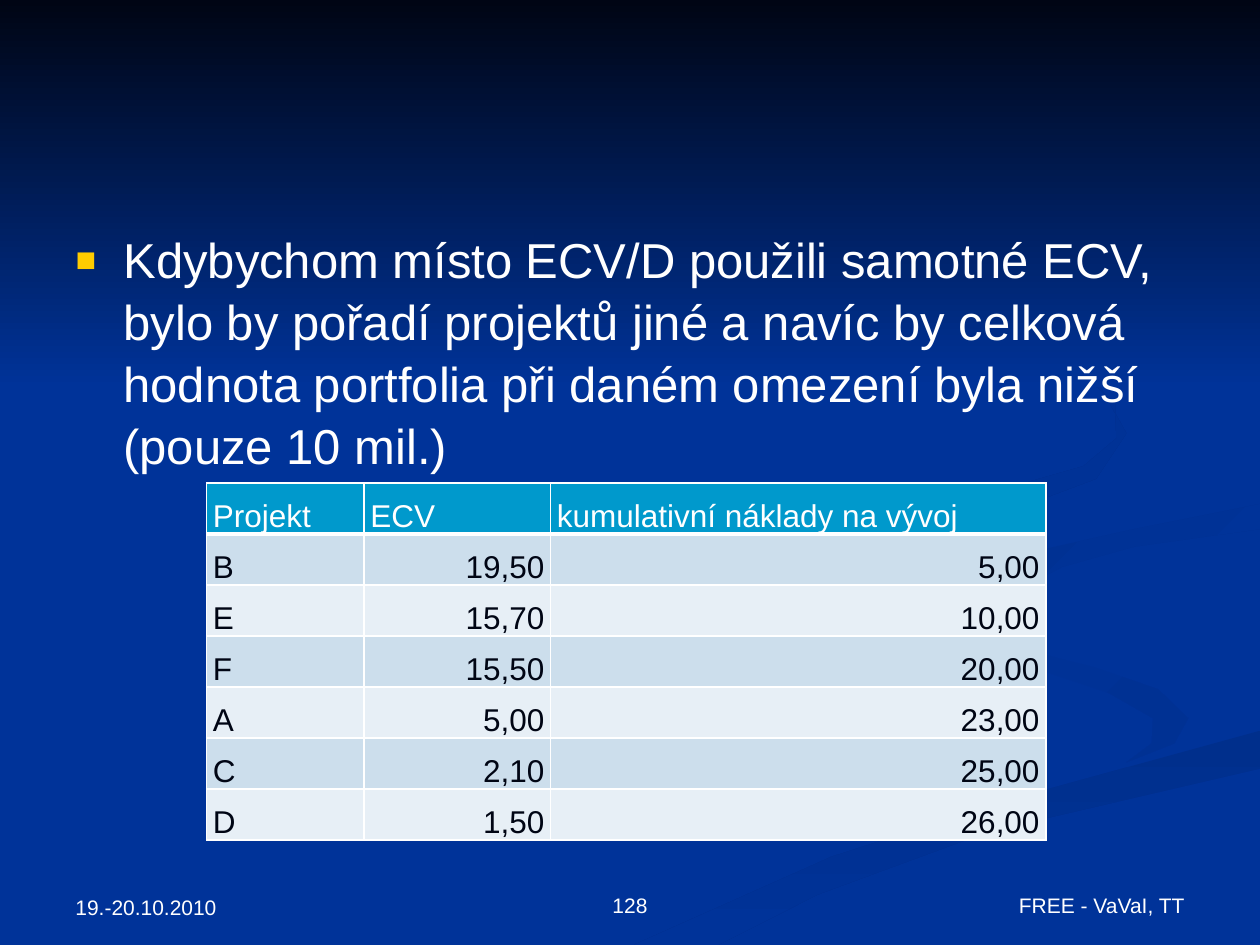
from lxml.etree import SubElement
from pptx import Presentation
from pptx.dml.color import RGBColor
from pptx.enum.shapes import MSO_SHAPE
from pptx.enum.text import MSO_ANCHOR, MSO_AUTO_SIZE, PP_ALIGN
from pptx.oxml.ns import qn
from pptx.util import Inches, Pt

HUES = {
    "base": "003399", "night": "000514", "white": "FFFFFF", "gold": "FFCC00",
    "head": "0099CC", "odd": "CCDEEC", "even": "E7EFF6",
    "dim": "003193", "deep": "002F8C",
}
RGB = {name: RGBColor.from_string(code) for name, code in HUES.items()}

deck = Presentation()
deck.slide_width, deck.slide_height = Inches(10), Inches(7.5)
wide, high = deck.slide_width, deck.slide_height
col, row = wide // 60, high // 45  # grid of 60 by 45 squares
slide = deck.slides.add_slide(deck.slide_layouts[1])
shapes = slide.shapes


def write(frame, text, size, hue, align=PP_ALIGN.LEFT):
    """Put one formatted paragraph into a text frame."""
    frame.text = text
    para = frame.paragraphs[0]
    para.alignment = align
    for key, value in {"name": "Arial", "size": Pt(size), "bold": False}.items():
        setattr(para.font, key, value)
    para.font.color.rgb = RGB[hue]
    return para


def shade(shape, start, end, angle):
    """Fill a shape with a two-colour gradient and no outline."""
    shape.shadow.inherit = False
    shape.line.fill.background()
    shape.fill.gradient()
    shape.fill.gradient_angle = angle
    for stop, hue, place in zip(shape.fill.gradient_stops, (start, end), (0, 1)):
        stop.color.rgb = RGB[hue]
        stop.position = place


# Background: swirls, points in tenths of an inch
slide.background.fill.solid()
slide.background.fill.fore_color.rgb = RGB["base"]
swirls = [
    ("base", "dim", 315, [
        (72.4, 46.4), (74.5, 49), (79.2, 51), (87, 53), (91.9, 54.7), (94.3, 57),
        (93.2, 59), (89.4, 60.5), (91.4, 59), (91.5, 57), (88, 55), (76, 51)]),
    ("deep", "base", 270, [
        (50.3, 75), (57, 75), (64.9, 71), (78.5, 66), (100, 61), (100, 58),
        (80, 63.5), (66, 68)]),
    ("dim", "base", 315, [
        (78, 46), (79, 48), (82.6, 49.6), (80.5, 47), (84.3, 45), (90, 43.4),
        (100, 42), (100, 40), (90, 42), (81, 44)]),
    ("deep", "base", 315, [
        (76, 23), (84, 28), (88.5, 32), (88.6, 34.8), (86, 37), (79, 39),
        (65, 42), (58, 45), (58, 47.4), (62, 50), (59.4, 47), (62, 44.4),
        (79, 41), (87, 38), (89.4, 34.4), (86.4, 29)]),
]
for start, end, angle, points in swirls:
    pen = shapes.build_freeform(*[round(v * 10) for v in points[0]], scale=Inches(0.01))
    pen.add_line_segments([(round(x * 10), round(y * 10)) for x, y in points[1:]])
    shade(pen.convert_to_shape(), start, end, angle)

# Dark band across the top
band = shapes.add_shape(MSO_SHAPE.RECTANGLE, 0, 0, wide, int(high * 0.41))
shade(band, "night", "base", 270)

# Body text with a square gold bullet, in front of the swirls
title = shapes.title._element
title.getparent().remove(title)
body = slide.placeholders[1]
body.left, body.top, body.width, body.height = 3 * col, int(10.5 * row), 54 * col, 30 * row
shapes._spTree.append(body._element)
body.text_frame.auto_size = MSO_AUTO_SIZE.NONE
para = write(
    body.text_frame,
    "Kdybychom místo ECV/D použili samotné ECV, bylo by pořadí projektů jiné "
    "a navíc by celková hodnota portfolia při daném omezení byla nižší "
    "(pouze 10 mil.)", 28, "white")
para.line_spacing = 1.05
props = para._p.get_or_add_pPr()
props.set("marL", str(Inches(0.38)))
props.set("indent", str(-Inches(0.38)))
paint = SubElement(props, qn("a:buClr"))
SubElement(paint, qn("a:srgbClr"), val=HUES["gold"])
for tag, key, value in (("buSzPct", "val", "70000"),
                        ("buFont", "typeface", "Arial"), ("buChar", "char", "■")):
    SubElement(props, qn(f"a:{tag}"), {key: value})
# The default run settings follow the bullet in the schema
props.append(props.find(qn("a:defRPr")))

# Footer: date, page number, event
footer = [
    ("19.-20.10.2010", 3, 14, 3.1, PP_ALIGN.LEFT),
    ("128", 20.5, 19, 3, PP_ALIGN.CENTER),
    ("FREE - VaVaI, TT", 43, 14, 3, PP_ALIGN.RIGHT),
]
for text, left, width, height, align in footer:
    box = shapes.add_textbox(int(left * col), 41 * row, width * col, int(height * row))
    box.text_frame.word_wrap = True
    box.text_frame.vertical_anchor = MSO_ANCHOR.BOTTOM
    write(box.text_frame, text, 12, "white", align)

# Project table
data = [
    ("Projekt", "ECV", "kumulativní náklady na vývoj"),
    ("B", "19,50", "5,00"),
    ("E", "15,70", "10,00"),
    ("F", "15,50", "20,00"),
    ("A", "5,00", "23,00"),
    ("C", "2,10", "25,00"),
    ("D", "1,50", "26,00"),
]
grid = shapes.add_table(len(data), 3, int(wide * 0.164), 23 * row,
                        40 * col, 17 * row).table
for column, width in zip(grid.columns, (1.25, 1.48, 3.93)):
    column.width = Inches(width)
look = {"margin_left": Inches(0.05), "margin_right": Inches(0.05),
        "margin_top": 0, "margin_bottom": 0, "vertical_anchor": MSO_ANCHOR.BOTTOM}
for r, line in enumerate(data):
    for c, text in enumerate(line):
        cell = grid.cell(r, c)
        for key, value in look.items():
            setattr(cell, key, value)
        align = PP_ALIGN.RIGHT if r and c else PP_ALIGN.LEFT
        para = write(cell.text_frame, text, 18, "night" if r else "white", align)
        para.line_spacing = 1.15
        for side in "LRTB":
            edge = SubElement(cell._tc.get_or_add_tcPr(), qn(f"a:ln{side}"),
                              w=str(Pt(3 if r == 0 and side == "B" else 1)))
            SubElement(SubElement(edge, qn("a:solidFill")), qn("a:srgbClr"),
                       val=HUES["white"])
        cell.fill.solid()
        cell.fill.fore_color.rgb = RGB["head" if r == 0 else "odd" if r % 2 else "even"]

deck.save("out.pptx")
